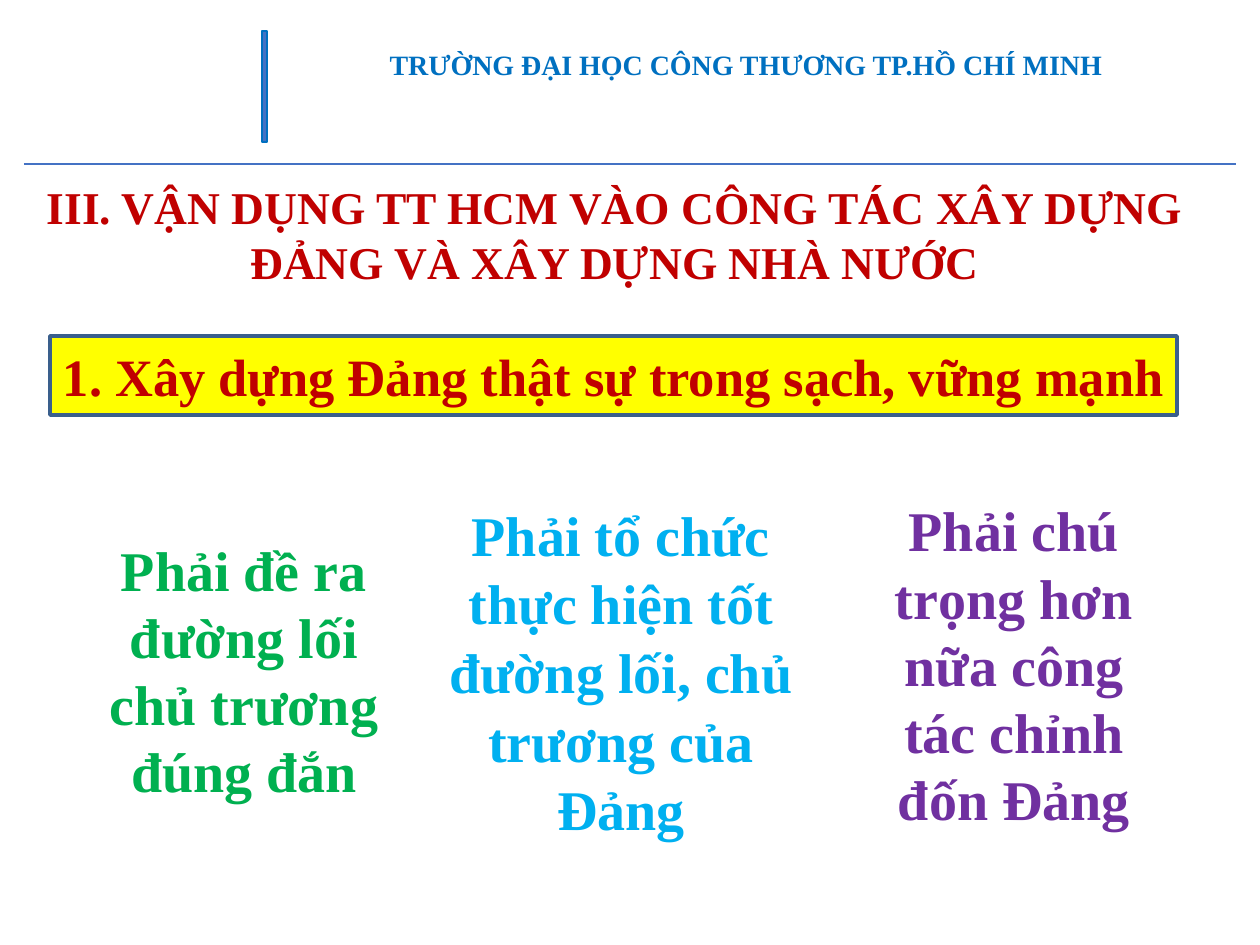
"""Builds the slide on applying Ho Chi Minh's thought to building the Party."""
from lxml.etree import SubElement
from pptx import Presentation
from pptx.dml.color import RGBColor as RGB
from pptx.enum.shapes import MSO_CONNECTOR as CONN, MSO_SHAPE as SHAPE
from pptx.enum.text import MSO_ANCHOR as ANCHOR, MSO_AUTO_SIZE as AUTO, PP_ALIGN as ALIGN
from pptx.oxml.ns import qn
from pptx.util import Pt

HUES = {
    "red": "C00000", "green": "00B050", "sky": "00B0F0", "purple": "7030A0",
    "blue": "0070C0", "rule": "4472C4", "yellow": "FFFF00", "navy": "3A5F8C",
}
SCHOOL = "TRƯỜNG ĐẠI HỌC CÔNG THƯƠNG TP.HỒ CHÍ MINH"
TITLE = "III. VẬN DỤNG TT HCM VÀO CÔNG TÁC XÂY DỰNG ĐẢNG VÀ XÂY DỰNG NHÀ NƯỚC"
TOPIC = "1. Xây dựng Đảng thật sự trong sạch, vững mạnh"
TASKS = [
    ("Phải đề ra đường lối chủ trương đúng đắn", "green", (108, 534, 272, 273), 1.0),
    ("Phải tổ chức thực hiện tốt đường lối, chủ trương của Đảng", "sky",
     (427, 498, 388, 346), 1.02),
    ("Phải chú trọng hơn nữa công tác chỉnh đốn Đảng", "purple",
     (862, 495, 304, 340), 1.0),
]


def px(num):
    return round(num * 914400 / 126)


def color(name):
    return RGB.from_string(HUES[name])


def write(shape, text, size, hue, pads, anchor=ANCHOR.TOP, gap=1.0):
    frame = shape.text_frame
    sides = [f"margin_{side}" for side in ("left", "top", "right", "bottom")]
    look = dict(zip(sides, map(px, pads)), word_wrap=True,
                auto_size=AUTO.NONE, vertical_anchor=anchor)
    for key, val in look.items():
        setattr(frame, key, val)
    para = frame.paragraphs[0]
    para.alignment, para.line_spacing = ALIGN.CENTER, gap
    run = para.add_run()
    run.text = text
    for key, val in {"name": "Times New Roman", "size": Pt(size), "bold": True}.items():
        setattr(run.font, key, val)
    run.font.color.rgb = color(hue)


def add_box(shapes, place, fill, edge, width):
    box = shapes.add_shape(SHAPE.RECTANGLE, *map(px, place))
    box.shadow.inherit = False
    box.fill.solid()
    box.fill.fore_color.rgb = color(fill)
    box.line.color.rgb = color(edge)
    box.line.width = Pt(width)
    return box


def main():
    deck = Presentation()
    deck.slide_width, deck.slide_height = px(1260), px(945)
    shapes = deck.slides.add_slide(deck.slide_layouts[5]).shapes

    title = shapes.title
    spot = zip(("left", "top", "width", "height"), (23, 173, 1184, 123))
    for key, val in spot:
        setattr(title, key, px(val))
    write(title, TITLE, 26, "red", (13, 6, 13, 6))

    for text, hue, place, gap in TASKS:
        task = shapes.add_textbox(*map(px, place))
        write(task, text, 32, hue, (0, 1, 0, 0), gap=gap)

    topic = add_box(shapes, (50, 336, 1127, 79), "yellow", "navy", 2)
    write(topic, TOPIC, 30, "red", (6, 6, 6, 6), ANCHOR.MIDDLE)

    rule = shapes.add_connector(CONN.STRAIGHT, *map(px, (24, 164, 1236, 164)))
    rule.line.color.rgb = color("rule")
    rule.line.width = Pt(1.5)
    SubElement(rule._element.spPr, qn("a:effectLst"))

    add_box(shapes, (262, 31, 5, 111), "rule", "blue", 1)
    school = shapes.add_textbox(*map(px, (267, 13, 964, 145)))
    write(school, SCHOOL, 16, "blue", (13, 6, 19, 48), ANCHOR.MIDDLE)

    deck.save("out.pptx")


if __name__ == "__main__":
    main()
